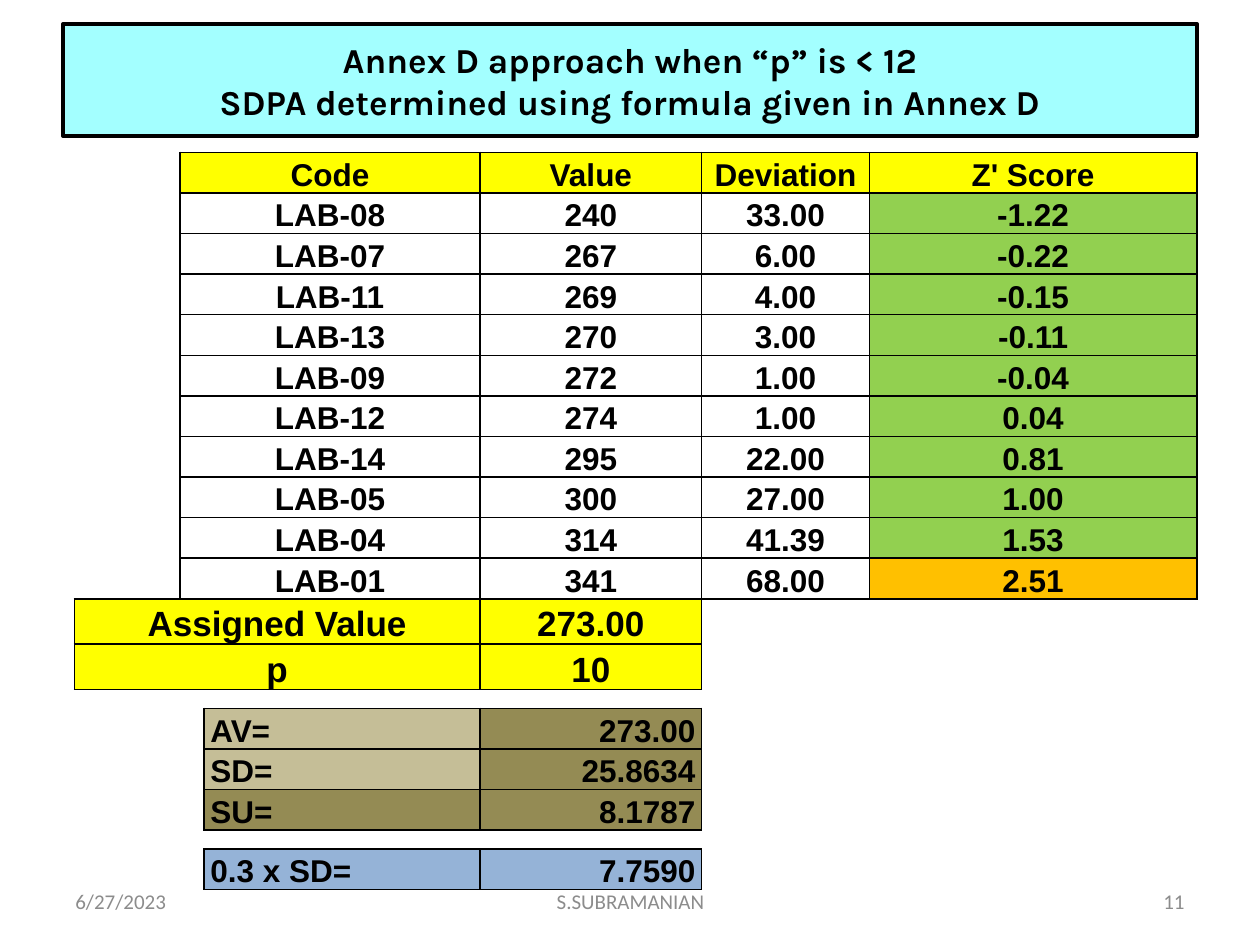
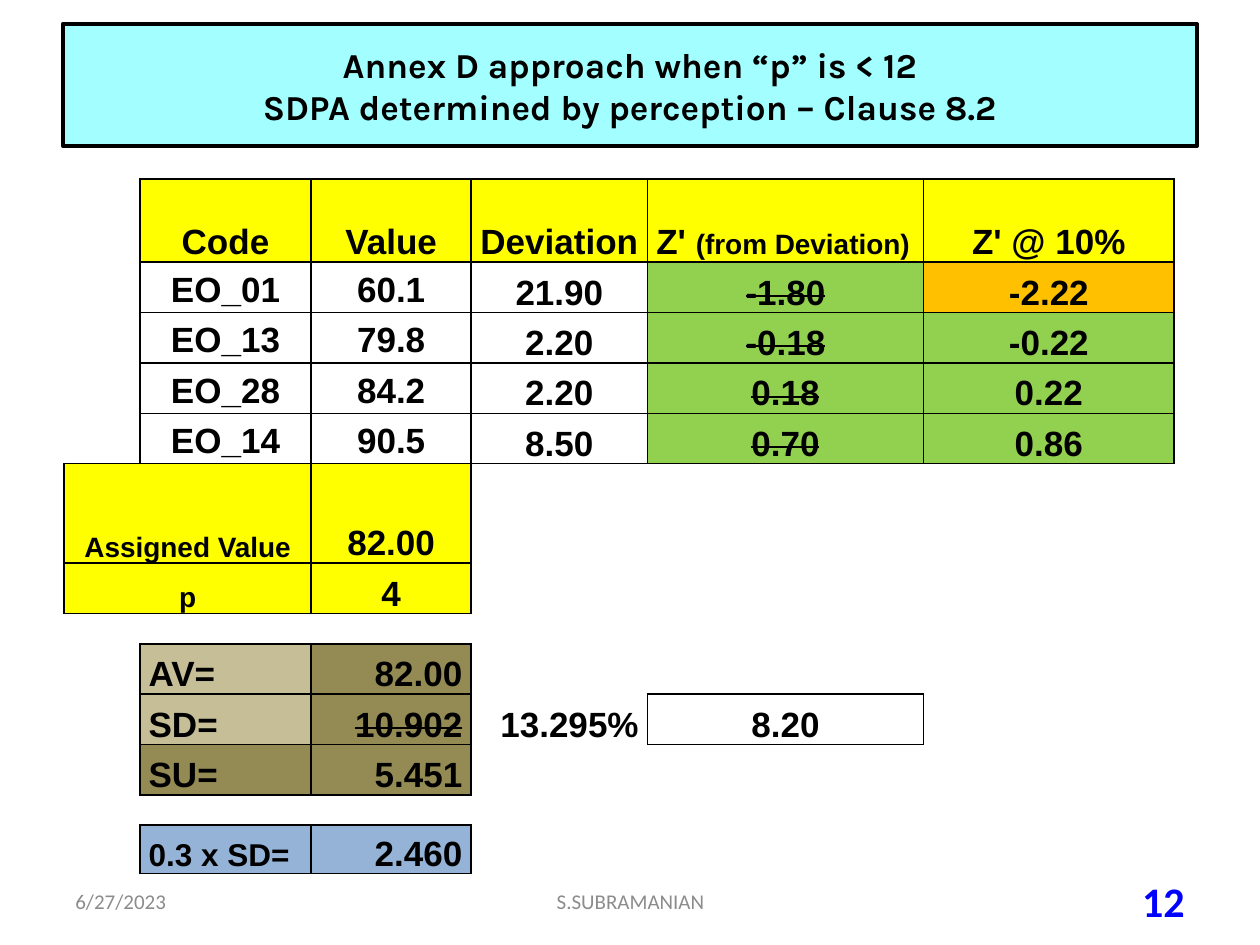
import lxml.etree
import pptx
import pptx.dml.color
import pptx.enum.shapes
import pptx.enum.text
import pptx.oxml.ns
import pptx.util

Inches = pptx.util.Inches
Pt = pptx.util.Pt
RGBColor = pptx.dml.color.RGBColor
ALIGN = pptx.enum.text.PP_ALIGN
ANCHOR = pptx.enum.text.MSO_ANCHOR
qn = pptx.oxml.ns.qn

BLACK = RGBColor(0x00, 0x00, 0x00)
CYAN = RGBColor(0xA3, 0xFF, 0xFF)
YELLOW = RGBColor(0xFF, 0xFF, 0x00)
GREEN = RGBColor(0x92, 0xD0, 0x50)
ORANGE = RGBColor(0xFF, 0xC0, 0x00)
TAN = RGBColor(0xC5, 0xBE, 0x97)
OLIVE = RGBColor(0x94, 0x8B, 0x54)
STEEL = RGBColor(0x95, 0xB3, 0xD7)
GREY = RGBColor(0x8C, 0x8C, 0x8C)
BLUE = RGBColor(0x00, 0x00, 0xFF)

CELL_STYLES = {
    "head": (YELLOW, ALIGN.CENTER, ANCHOR.BOTTOM),
    "head left": (YELLOW, ALIGN.LEFT, ANCHOR.BOTTOM),
    "lab": (None, ALIGN.CENTER, ANCHOR.MIDDLE),
    "deviation": (None, ALIGN.CENTER, ANCHOR.BOTTOM),
    "score": (GREEN, ALIGN.CENTER, ANCHOR.BOTTOM),
    "label": (TAN, ALIGN.LEFT, ANCHOR.BOTTOM),
    "result label": (OLIVE, ALIGN.LEFT, ANCHOR.BOTTOM),
    "result": (OLIVE, ALIGN.RIGHT, ANCHOR.BOTTOM),
    "limit label": (STEEL, ALIGN.LEFT, ANCHOR.BOTTOM),
    "limit": (STEEL, ALIGN.RIGHT, ANCHOR.BOTTOM),
    "percent": (None, ALIGN.RIGHT, ANCHOR.BOTTOM),
}
UNBOXED = {"percent"}
SCORE_LIMIT = 2
SMALL_PART = 16
STRUCK = {"-1.80", "-0.18", "0.18", "0.70", "10.902"}

# blocks: first row, columns as (first column, span, style, size), lines
SLIDES = [
    {
        "title": "Annex D approach when “p” is < 12\vSDPA determined using formula given in Annex D",
        "title_height": 0.89,
        "number": ("11", 12, GREY, False),
        "table_at": (0.59, 1.21),
        "cell_margin": 0.05,
        "columns": [0.84, 0.19, 2.19, 1.76, 1.33, 2.6],
        "rows": [0.32] * 11 + [0.36] * 2 + [0.15] + [0.32] * 3 + [0.15, 0.32],
        "blocks": [
            (0, [(1, 2, "head", 18), (3, 1, "head", 18), (4, 1, "head", 18), (5, 1, "head", 18)],
             [("Code", "Value", "Deviation", "Z' Score")]),
            (1, [(1, 2, "lab", 18), (3, 1, "lab", 18), (4, 1, "deviation", 18), (5, 1, "score", 18)], [
                ("LAB-08", "240", "33.00", "-1.22"),
                ("LAB-07", "267", "6.00", "-0.22"),
                ("LAB-11", "269", "4.00", "-0.15"),
                ("LAB-13", "270", "3.00", "-0.11"),
                ("LAB-09", "272", "1.00", "-0.04"),
                ("LAB-12", "274", "1.00", "0.04"),
                ("LAB-14", "295", "22.00", "0.81"),
                ("LAB-05", "300", "27.00", "1.00"),
                ("LAB-04", "314", "41.39", "1.53"),
                ("LAB-01", "341", "68.00", "2.51"),
            ]),
            (11, [(0, 3, "head", 20), (3, 1, "head", 20)],
             [("Assigned Value", "273.00"), ("p", "10")]),
            (14, [(2, 1, "label", 18), (3, 1, "result", 18)],
             [("AV=", "273.00"), ("SD=", "25.8634")]),
            (16, [(2, 1, "result label", 18), (3, 1, "result", 18)], [("SU=", "8.1787")]),
            (18, [(2, 1, "limit label", 18), (3, 1, "limit", 18)], [("0.3 x SD=", "7.7590")]),
        ],
    },
    {
        "title": "Annex D approach when “p” is < 12\vSDPA determined by perception – Clause 8.2",
        "title_height": 0.97,
        "number": ("12", 24, BLUE, True),
        "table_at": (0.51, 1.42),
        "cell_margin": 0.07,
        "columns": [0.6, 1.36, 1.27, 1.4, 2.19, 1.99],
        "rows": [0.66] + [0.4] * 4 + [0.79, 0.4, 0.24] + [0.4] * 3 + [0.24, 0.37],
        "blocks": [
            (0, [(1, 1, "head", 20), (2, 1, "head", 20), (3, 1, "head", 20),
                 (4, 1, "head left", 20), (5, 1, "head", 20)],
             [("Code", "Value", "Deviation", ("Z' ", "(from Deviation)"), "Z' @ 10%")]),
            (1, [(1, 1, "lab", 20), (2, 1, "lab", 20), (3, 1, "deviation", 20),
                 (4, 1, "score", 20), (5, 1, "score", 20)], [
                ("EO_01", "60.1", "21.90", "-1.80", "-2.22"),
                ("EO_13", "79.8", "2.20", "-0.18", "-0.22"),
                ("EO_28", "84.2", "2.20", "0.18", "0.22"),
                ("EO_14", "90.5", "8.50", "0.70", "0.86"),
            ]),
            (5, [(0, 2, "head", 16), (2, 1, "head", 20)],
             [("Assigned Value", "82.00"), ("p", "4")]),
            (8, [(1, 1, "label", 20), (2, 1, "result", 20)],
             [("AV=", "82.00"), ("SD=", "10.902")]),
            (9, [(3, 1, "percent", 20), (4, 1, "deviation", 20)], [("13.295%", "8.20")]),
            (10, [(1, 1, "result label", 20), (2, 1, "result", 20)], [("SU=", "5.451")]),
            (12, [(1, 1, "limit label", 18), (2, 1, "limit", 20)], [("0.3 x SD=", "2.460")]),
        ],
    },
]
STRUCK_COLUMNS = {"score": 4, "result": 2}

FOOTERS = [
    (0.5, 2.33, ALIGN.LEFT, ("6/27/2023", 12, GREY, False)),
    (3.42, 3.17, ALIGN.CENTER, ("S.SUBRAMANIAN", 12, GREY, False)),
]


def format_run(run, font, size, color, bold):
    run.font.name = font
    run.font.size = Pt(size)
    run.font.color.rgb = color
    run.font.bold = bold


def add_title(slide, title, height):
    band = slide.shapes.add_shape(pptx.enum.shapes.MSO_SHAPE.RECTANGLE,
                                  Inches(0.5), Inches(0.19), Inches(9), Inches(height))
    band.shadow.inherit = False
    band.fill.solid()
    band.fill.fore_color.rgb = CYAN
    band.line.color.rgb = BLACK
    band.line.width = Pt(2.25)
    band.text_frame.vertical_anchor = ANCHOR.MIDDLE
    paragraph = band.text_frame.paragraphs[0]
    paragraph.text = title
    paragraph.alignment = ALIGN.CENTER
    for run in paragraph.runs:
        format_run(run, "Karla", 20, BLACK, True)


def add_footer(slide, left, width, alignment, content):
    text, size, color, bold = content
    footer = slide.shapes.add_textbox(Inches(left), Inches(6.95), Inches(width), Inches(0.4))
    footer.text_frame.word_wrap = True
    footer.text_frame.vertical_anchor = ANCHOR.MIDDLE
    paragraph = footer.text_frame.paragraphs[0]
    paragraph.text = text
    paragraph.alignment = alignment
    format_run(paragraph.runs[0], "Calibri", size, color, bold)


def set_borders(cell, drawn):
    properties = cell._tc.get_or_add_tcPr()
    for side in "LRTB":
        line = lxml.etree.SubElement(properties, qn(f"a:ln{side}"), w=str(Pt(1)))
        if side in drawn:
            fill = lxml.etree.SubElement(line, qn("a:solidFill"))
            lxml.etree.SubElement(fill, qn("a:srgbClr"), val=str(BLACK))
        else:
            lxml.etree.SubElement(line, qn("a:noFill"))


def write_cell(cell, text, style, size, struck):
    fill, alignment, anchor = CELL_STYLES[style]
    if style == "score" and abs(float(text)) >= SCORE_LIMIT:
        fill = ORANGE
    if fill is not None:
        cell.fill.solid()
        cell.fill.fore_color.rgb = fill
    cell.vertical_anchor = anchor
    paragraph = cell.text_frame.paragraphs[0]
    paragraph.alignment = alignment
    paragraph.line_spacing = 1.15
    parts = text if isinstance(text, tuple) else (text,)
    for part, part_size in zip(parts, (size, SMALL_PART)):
        run = paragraph.add_run()
        run.text = part
        format_run(run, "Arial", part_size, BLACK, True)
        if struck:
            run._r.get_or_add_rPr().set("strike", "sngStrike")


def add_results(slide, content):
    columns, rows = content["columns"], content["rows"]
    left, top = content["table_at"]
    table = slide.shapes.add_table(len(rows), len(columns), Inches(left), Inches(top),
                                   Inches(sum(columns)), Inches(sum(rows))).table
    table.first_row = False
    table.horz_banding = False
    for column, width in zip(table.columns, columns):
        column.width = Inches(width)
    for row, height in zip(table.rows, rows):
        row.height = Inches(height)

    entries = [(first_row + offset, *column, text)
               for first_row, block_columns, lines in content["blocks"]
               for offset, line in enumerate(lines)
               for column, text in zip(block_columns, line)]
    boxed = {(row, first + step) for row, first, span, style, _, _ in entries
             for step in range(span) if style not in UNBOXED}
    written = {(row, first) for row, first, *_ in entries}

    for row in range(len(rows)):
        for column in range(len(columns)):
            cell = table.cell(row, column)
            neighbours = {"L": (row, column - 1), "R": (row, column + 1),
                          "T": (row - 1, column), "B": (row + 1, column)}
            set_borders(cell, {side for side, place in neighbours.items()
                               if (row, column) in boxed or place in boxed})
            cell.fill.background()
            cell.margin_left = cell.margin_right = Inches(content["cell_margin"])
            cell.margin_top = cell.margin_bottom = 0
            if (row, column) not in written:
                lxml.etree.SubElement(cell.text_frame.paragraphs[0]._p,
                                      qn("a:endParaRPr"), sz="600")

    for row, first, span, style, size, text in entries:
        cell = table.cell(row, first)
        if span > 1:
            cell.merge(table.cell(row, first + span - 1))
        struck = text in STRUCK and STRUCK_COLUMNS.get(style) == first
        write_cell(cell, text, style, size, struck)


def main():
    deck = pptx.Presentation()
    deck.slide_width, deck.slide_height = Inches(10), Inches(7.5)
    for content in SLIDES:
        slide = deck.slides.add_slide(deck.slide_layouts[6])
        add_title(slide, content["title"], content["title_height"])
        add_results(slide, content)
        for footer in FOOTERS:
            add_footer(slide, *footer)
        add_footer(slide, 7.17, 2.33, ALIGN.RIGHT, content["number"])
    deck.save("out.pptx")


if __name__ == "__main__":
    main()
